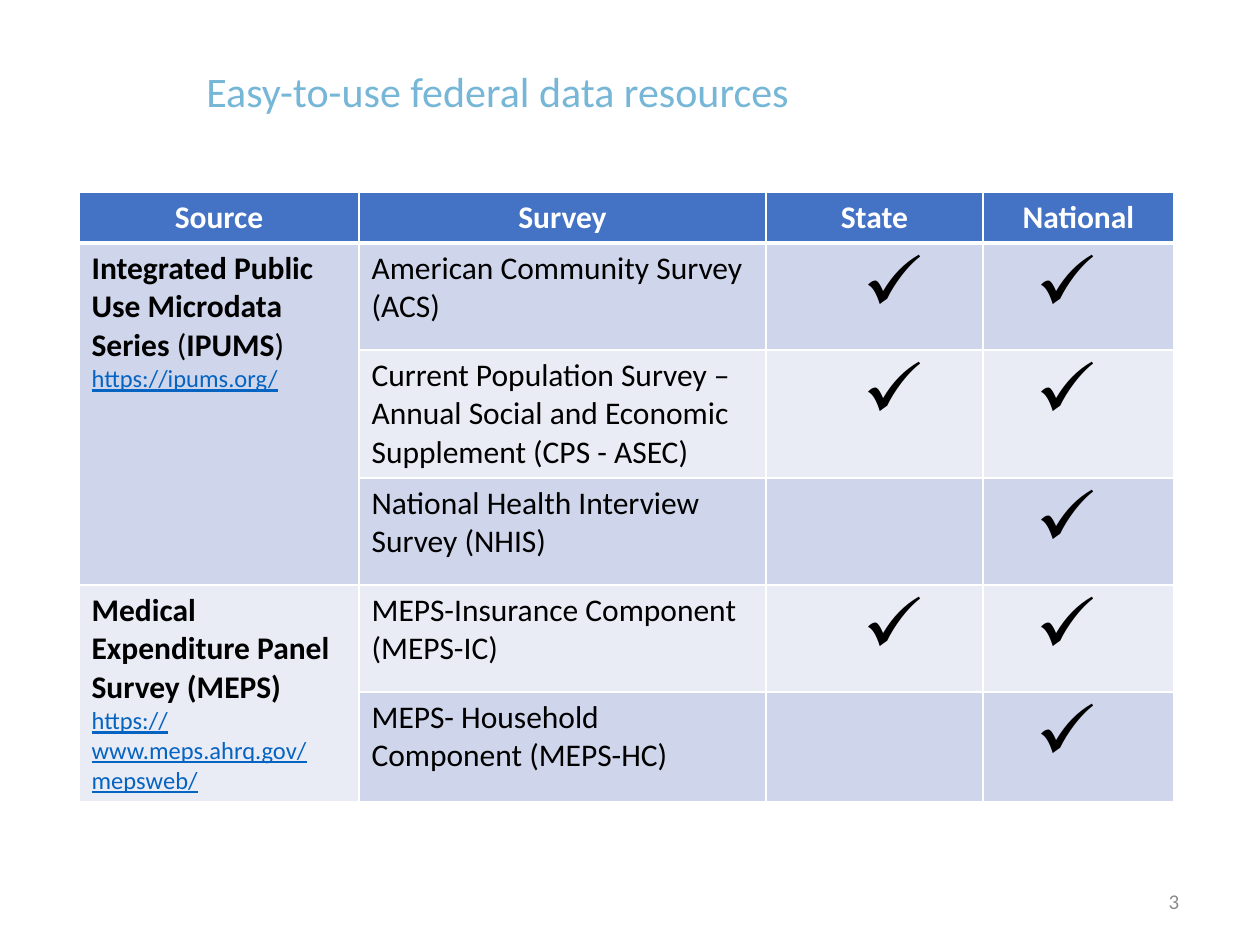
from lxml.etree import SubElement
from pptx import Presentation
from pptx.dml.color import RGBColor
from pptx.enum.text import MSO_ANCHOR, PP_ALIGN
from pptx.oxml.ns import qn
from pptx.util import Emu, Pt

SCALE = 914400 / 126
WHITE = RGBColor(0xFF, 0xFF, 0xFF)
BLACK = RGBColor(0x00, 0x00, 0x00)
TITLE_BLUE = RGBColor(0x76, 0xB6, 0xD7)
HEADER_BLUE = RGBColor(0x44, 0x72, 0xC4)
LINK_BLUE = RGBColor(0x05, 0x63, 0xC1)
NUMBER_GRAY = RGBColor(0x8C, 0x8C, 0x8C)
BANDS = (RGBColor(0xCF, 0xD5, 0xEA), RGBColor(0xE9, 0xEB, 0xF5))

COLUMN_WIDTHS = (280, 407, 217, 191)
ROW_HEIGHTS = (51, 107, 128, 107, 107, 110)
HEADERS = ("Source", "Survey", "State", "National")
SURVEYS = (
    ("American Community Survey (ACS)", True, True),
    ("Current Population Survey – Annual Social and Economic Supplement (CPS - ASEC)", True, True),
    ("National Health Interview Survey (NHIS)", False, True),
    ("MEPS-Insurance Component (MEPS-IC)", True, True),
    ("MEPS- Household Component (MEPS-HC)", False, True),
)
SOURCES = (
    (1, 3, (("Integrated Public Use Microdata Series", True), ("\u00a0(", False),
            ("IPUMS", True), (")", False)), "https://ipums.org/"),
    (4, 5, (("Medical Expenditure Panel Survey (MEPS)", True),),
     "https://www.meps.ahrq.gov/mepsweb/"),
)
CHECK_INDENT = 79
CHECK_MARGINS = (97, 53)


def px(length):
    """Turn a length in px into EMU."""
    return Emu(round(length * SCALE))


def add_text(paragraph, text, size=18, color=BLACK, bold=False, underline=False,
             align=PP_ALIGN.LEFT):
    """Add a formatted run to a paragraph."""
    paragraph.alignment = align
    run = paragraph.add_run()
    run.text = text
    run.font.name = "Calibri"
    run.font.size = Pt(size)
    run.font.color.rgb = color
    run.font.bold = bold
    run.font.underline = underline


def add_label(slide, box, text, line_spacing=1.0, **text_format):
    """Place a vertically centred line of text in a box."""
    frame = slide.shapes.add_textbox(*map(px, box)).text_frame
    frame.word_wrap = True
    frame.vertical_anchor = MSO_ANCHOR.MIDDLE
    frame.paragraphs[0].line_spacing = line_spacing
    add_text(frame.paragraphs[0], text, **text_format)


def style_cell(cell, color, bottom_width=1):
    """Fill a cell and give it white borders."""
    properties = cell._tc.get_or_add_tcPr()
    for side, width in (("L", 1), ("R", 1), ("T", 1), ("B", bottom_width)):
        line = SubElement(properties, qn(f"a:ln{side}"), w=str(Pt(width)))
        SubElement(SubElement(line, qn("a:solidFill")), qn("a:srgbClr"), val=str(WHITE))
    cell.fill.solid()
    cell.fill.fore_color.rgb = color


def add_check(cell, margin):
    """Put a check mark bullet in a cell."""
    cell.margin_left = px(margin)
    cell.margin_right = 0
    paragraph = cell.text_frame.paragraphs[0]
    properties = paragraph._p.get_or_add_pPr()
    properties.set("marL", str(px(CHECK_INDENT)))
    properties.set("indent", str(-px(CHECK_INDENT)))
    SubElement(properties, qn("a:buFont"), typeface="Wingdings", charset="2")
    SubElement(properties, qn("a:buChar"), char="ü")
    add_text(paragraph, " ", size=44)


def add_source(table, first, last, parts, link):
    """Merge the rows of one source and write its name and address."""
    cell = table.cell(first, 0)
    cell.merge(table.cell(last, 0))
    for text, bold in parts:
        add_text(cell.text_frame.paragraphs[0], text, bold=bold)
    add_text(cell.text_frame.add_paragraph(), link, size=14, color=LINK_BLUE, underline=True)


def add_resource_table(slide, left, top):
    """Place the table of surveys at a corner point."""
    table = slide.shapes.add_table(
        len(ROW_HEIGHTS), len(COLUMN_WIDTHS), px(left), px(top),
        px(sum(COLUMN_WIDTHS)), px(sum(ROW_HEIGHTS))).table
    for column, width in zip(table.columns, COLUMN_WIDTHS):
        column.width = px(width)
    for row, height in zip(table.rows, ROW_HEIGHTS):
        row.height = px(height)
    for index, header in enumerate(HEADERS):
        cell = table.cell(0, index)
        style_cell(cell, HEADER_BLUE, bottom_width=3)
        add_text(cell.text_frame.paragraphs[0], header, color=WHITE, bold=True,
                 align=PP_ALIGN.CENTER)
    for row, (survey, *checks) in enumerate(SURVEYS, 1):
        for column in range(len(HEADERS)):
            style_cell(table.cell(row, column), BANDS[(row - 1) % 2])
        add_text(table.cell(row, 1).text_frame.paragraphs[0], survey)
        for column, (checked, margin) in enumerate(zip(checks, CHECK_MARGINS), 2):
            if checked:
                add_check(table.cell(row, column), margin)
    for source in SOURCES:
        add_source(table, *source)


def main():
    """Build and save the presentation."""
    presentation = Presentation()
    presentation.slide_width = px(1260)
    presentation.slide_height = px(945)
    slide = presentation.slides.add_slide(presentation.slide_layouts[6])
    add_label(slide, (194, 33, 1000, 121), "Easy-to-use federal data resources",
              line_spacing=0.9, size=24, color=TITLE_BLUE)
    add_label(slide, (1138, 876, 72, 50), "3", size=12, color=NUMBER_GRAY,
              align=PP_ALIGN.CENTER)
    add_resource_table(slide, 79, 192)
    presentation.save("out.pptx")


if __name__ == "__main__":
    main()
